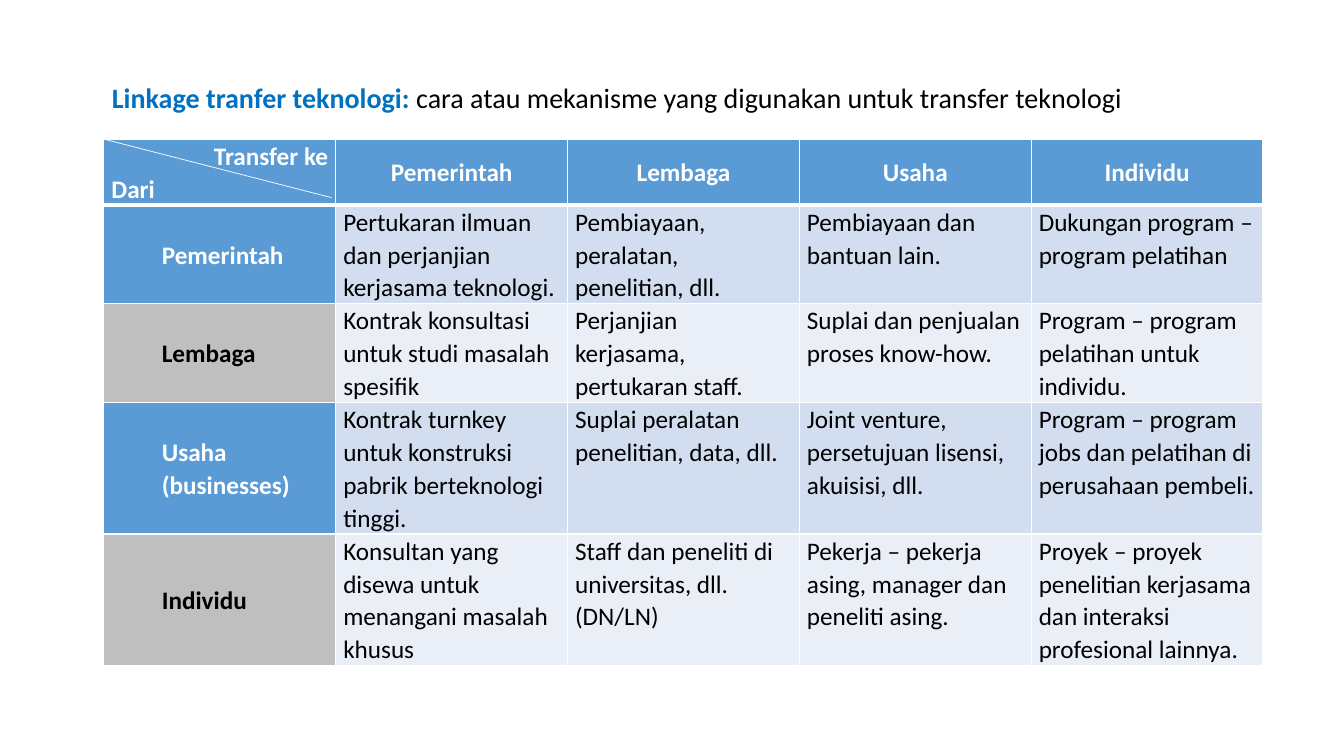
from lxml import etree
from pptx import Presentation
from pptx.dml.color import RGBColor
from pptx.enum import shapes, text
from pptx.oxml import ns
from pptx.util import Pt

WHITE = RGBColor(0xFF, 0xFF, 0xFF)
BLACK = RGBColor(0, 0, 0)
BLUE = RGBColor(0x5B, 0x9B, 0xD5)
TITLE_BLUE = RGBColor(0x00, 0x70, 0xC0)
GREY = RGBColor(0xBF, 0xBF, 0xBF)
BAND_DARK = RGBColor(0xD2, 0xDE, 0xEF)
BAND_LIGHT = RGBColor(0xEA, 0xEF, 0xF7)

FONT = "Calibri"
LINE_HEIGHT = 23.5
LEFT, RIGHT, CENTER = text.PP_ALIGN.LEFT, text.PP_ALIGN.RIGHT, text.PP_ALIGN.CENTER

HEADERS = ["Pemerintah", "Lembaga", "Usaha", "Individu"]
ROWS = [
    (3, ["Pemerintah"], [
        "Pertukaran ilmuan dan perjanjian kerjasama teknologi.",
        "Pembiayaan, peralatan, penelitian, dll.",
        "Pembiayaan dan bantuan lain.",
        "Dukungan program – program pelatihan"]),
    (3, ["Lembaga"], [
        "Kontrak konsultasi untuk studi masalah spesifik",
        "Perjanjian kerjasama, pertukaran staff.",
        "Suplai dan penjualan proses know-how.",
        "Program – program pelatihan untuk individu."]),
    (4, ["Usaha", "(businesses)"], [
        "Kontrak turnkey untuk konstruksi pabrik berteknologi tinggi.",
        "Suplai peralatan penelitian, data, dll.",
        "Joint venture, persetujuan lisensi, akuisisi, dll.",
        "Program – program jobs dan pelatihan di perusahaan pembeli."]),
    (4, ["Individu"], [
        "Konsultan yang disewa untuk menangani masalah khusus",
        "Staff dan peneliti di universitas, dll. (DN/LN)",
        "Pekerja – pekerja asing, manager dan peneliti asing.",
        "Proyek – proyek penelitian kerjasama dan interaksi profesional lainnya."]),
]


def add_run(paragraph, content, size, color, bold):
    """Append one formatted run to a paragraph."""
    run = paragraph.add_run()
    run.text = content
    run.font.name = FONT
    run.font.size = Pt(size)
    run.font.bold = bold
    run.font.color.rgb = color


def set_borders(cell, top, bottom):
    """Give a cell white borders, with its own top and bottom widths."""
    properties = cell._tc.get_or_add_tcPr()
    widths = {"a:lnL": 1, "a:lnR": 1, "a:lnT": top, "a:lnB": bottom}
    for position, (tag, width) in enumerate(widths.items()):
        line = etree.Element(ns.qn(tag), w=str(Pt(width)))
        fill = etree.SubElement(line, ns.qn("a:solidFill"))
        etree.SubElement(fill, ns.qn("a:srgbClr"), val=str(WHITE))
        properties.insert(position, line)


def fill_cell(cell, lines, fill, color, bold, middle, indent=0, top=1, bottom=1):
    """Fill a cell with a colour, borders and (text, alignment) lines."""
    cell.margin_left = cell.margin_right = Pt(5.4)
    cell.margin_top = cell.margin_bottom = 0
    cell.vertical_anchor = text.MSO_ANCHOR.MIDDLE if middle else text.MSO_ANCHOR.TOP
    cell.fill.solid()
    cell.fill.fore_color.rgb = fill
    set_borders(cell, top, bottom)
    frame = cell.text_frame
    for index, (content, alignment) in enumerate(lines):
        paragraph = frame.add_paragraph() if index else frame.paragraphs[0]
        paragraph.alignment = alignment
        paragraph.line_spacing = 1.07
        if indent:
            paragraph.level = 1
            properties = paragraph._p.get_or_add_pPr()
            properties.set("marL", str(Pt(indent)))
            properties.set("indent", "0")
        add_run(paragraph, content, 18, color, bold)


def add_title(slide, left, top, width, height):
    """Place the heading in the title placeholder."""
    title = slide.shapes.title
    title.left, title.top, title.width, title.height = map(Pt, (left, top, width, height))
    frame = title.text_frame
    frame.word_wrap = False
    frame.auto_size = text.MSO_AUTO_SIZE.SHAPE_TO_FIT_TEXT
    frame.vertical_anchor = text.MSO_ANCHOR.TOP
    paragraph = frame.paragraphs[0]
    paragraph.alignment = LEFT
    add_run(paragraph, "Linkage tranfer teknologi: ", 20, TITLE_BLUE, True)
    add_run(paragraph, "cara atau mekanisme yang digunakan untuk transfer teknologi",
            20, BLACK, False)


def add_linkage_table(slide, left, top, width):
    """Build the transfer matrix and its diagonal corner line."""
    line_counts = [2] + [count for count, _, _ in ROWS]
    height = sum(line_counts) * LINE_HEIGHT
    columns = len(HEADERS) + 1
    table = slide.shapes.add_table(
        len(line_counts), columns, Pt(left), Pt(top), Pt(width), Pt(height)).table
    for column in table.columns:
        column.width = Pt(width / columns)
    for row, count in zip(table.rows, line_counts):
        row.height = Pt(count * LINE_HEIGHT)

    corner = [("Transfer ke", RIGHT), ("Dari", LEFT)]
    fill_cell(table.cell(0, 0), corner, BLUE, WHITE, True, False, bottom=3)
    for column, header in enumerate(HEADERS, 1):
        fill_cell(table.cell(0, column), [(header, CENTER)], BLUE, WHITE, True, True, bottom=3)

    for row, (_, names, entries) in enumerate(ROWS, 1):
        dark = row % 2 == 1
        border = 3 if row == 1 else 1
        fill_cell(table.cell(row, 0), [(name, LEFT) for name in names],
                  BLUE if dark else GREY, WHITE if dark else BLACK, True, True,
                  indent=36, top=border)
        for column, entry in enumerate(entries, 1):
            fill_cell(table.cell(row, column), [(entry, LEFT)],
                      BAND_DARK if dark else BAND_LIGHT, BLACK, False, False, top=border)

    diagonal = slide.shapes.add_connector(
        shapes.MSO_CONNECTOR.STRAIGHT, Pt(left), Pt(top), Pt(left + 162.7), Pt(top + 41.8))
    diagonal.line.color.rgb = WHITE
    diagonal.line.width = Pt(0.5)
    etree.SubElement(diagonal._element.spPr, ns.qn("a:effectLst"))


def main():
    """Create and save the presentation."""
    presentation = Presentation()
    presentation.slide_width, presentation.slide_height = Pt(960), Pt(540)
    slide = presentation.slides.add_slide(presentation.slide_layouts[5])
    add_title(slide, 72.7, 54, 737.3, 31.5)
    add_linkage_table(slide, 74.2, 99.4, 828)
    presentation.save("out.pptx")


if __name__ == "__main__":
    main()
